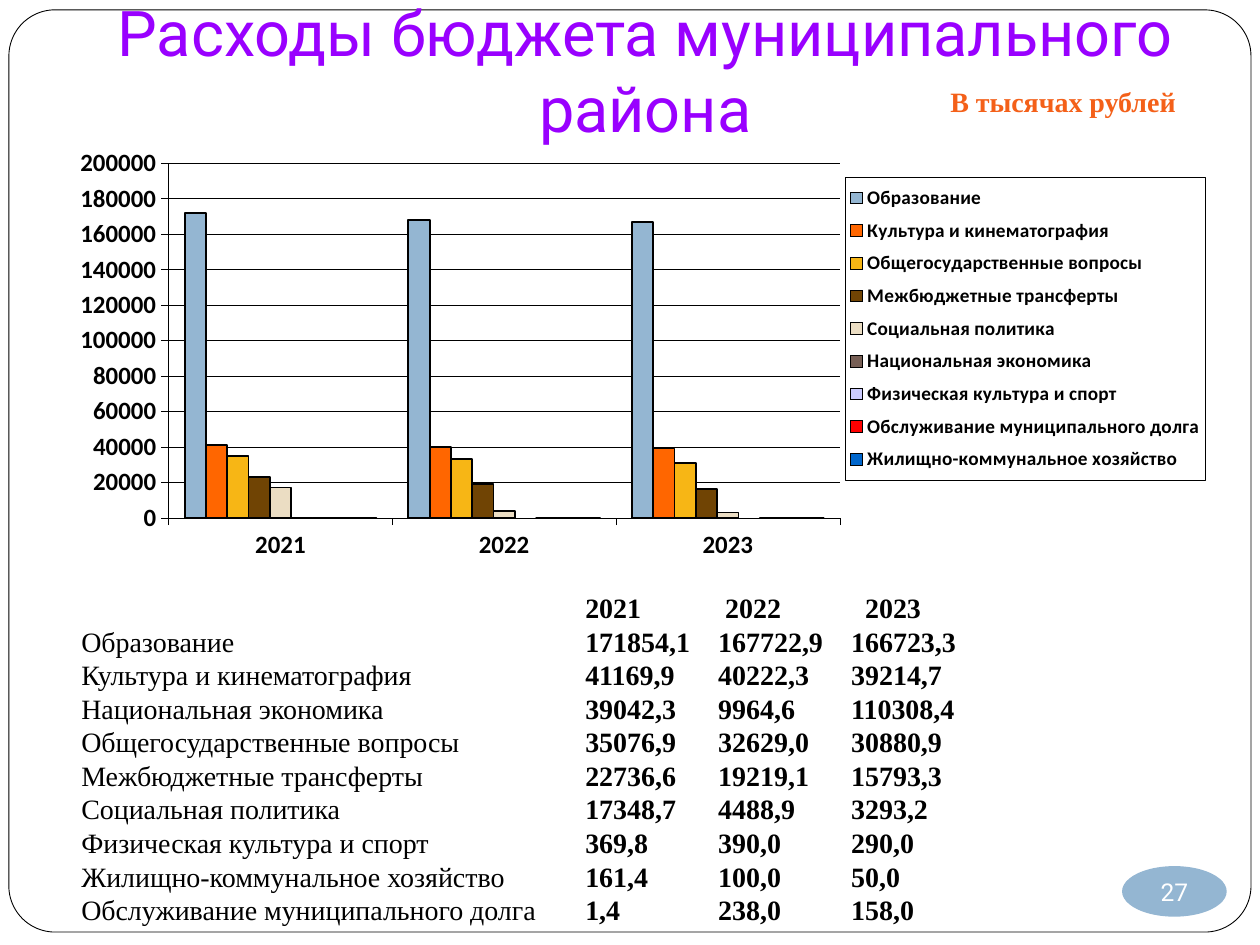
from dataclasses import dataclass

from lxml import etree
from pptx import Presentation
from pptx.chart.data import CategoryChartData
from pptx.dml.color import RGBColor
from pptx.enum.chart import XL_CHART_TYPE, XL_LEGEND_POSITION, XL_TICK_LABEL_POSITION, XL_TICK_MARK
from pptx.enum.shapes import MSO_SHAPE
from pptx.enum.text import MSO_ANCHOR, PP_ALIGN
from pptx.oxml import parse_xml
from pptx.oxml.ns import nsdecls, qn
from pptx.util import Cm, Pt


@dataclass(frozen=True)
class Theme:
    ink: str = "000000"
    paper: str = "FFFFFF"
    title: str = "9900FF"
    unit: str = "F46019"
    badge: str = "94B6D2"
    head_font: str = "Roboto"
    body_font: str = "Times New Roman"
    chart_font: str = "Calibri"
    title_size: float = 36
    body_size: float = 16
    badge_size: float = 14
    axis_size: float = 14.2
    legend_size: float = 11


def style(font, name, size, color, bold=False):
    font.name, font.size, font.bold = name, Pt(size), bold
    font.color.rgb = RGBColor.from_string(color)


def manual_layout(x, y, w, h, inner=False):
    """Return a chart layout element for a box given in centimetres."""
    layout = parse_xml(f'<c:layout {nsdecls("c")}><c:manualLayout/></c:layout>')
    settings = [("layoutTarget", "inner")] if inner else []
    settings += [("xMode", "edge"), ("yMode", "edge"), ("x", x / chart_width), ("y", y / chart_height),
                 ("w", w / chart_width), ("h", h / chart_height)]
    for tag, value in settings:
        etree.SubElement(layout[0], qn(f"c:{tag}")).set("val", str(value))
    return layout


theme = Theme()
chart_width, chart_height = 24.21, 8.76
years = ["2021", "2022", "2023"]
expenses = {
    "Образование": (171854.1, 167722.9, 166723.3),
    "Культура и кинематография": (41169.9, 40222.3, 39214.7),
    "Национальная экономика": (39042.3, 9964.6, 110308.4),
    "Общегосударственные вопросы": (35076.9, 32629.0, 30880.9),
    "Межбюджетные трансферты": (22736.6, 19219.1, 15793.3),
    "Социальная политика": (17348.7, 4488.9, 3293.2),
    "Физическая культура и спорт": (369.8, 390.0, 290.0),
    "Жилищно-коммунальное хозяйство": (161.4, 100.0, 50.0),
    "Обслуживание муниципального долга": (1.4, 238.0, 158.0),
}
series_colors = {
    "Образование": "94B6D2",
    "Культура и кинематография": "FF6600",
    "Общегосударственные вопросы": "F7B615",
    "Межбюджетные трансферты": "704404",
    "Социальная политика": "EBDDC3",
    "Национальная экономика": "775F55",
    "Физическая культура и спорт": "CCCCFF",
    "Обслуживание муниципального долга": "FF0000",
    "Жилищно-коммунальное хозяйство": "0066CC",
}
# The chart shows whole thousands, and no amounts for the national economy.
plotted = {name: [round(v, -3) for v in values] for name, values in expenses.items()}
plotted["Национальная экономика"] = [0, None, None]

prs = Presentation()
prs.slide_width, prs.slide_height = Cm(25.4), Cm(19.05)
s = prs.slides.add_slide(prs.slide_layouts[6])

# Frame
frame = s.shapes.add_shape(MSO_SHAPE.ROUNDED_RECTANGLE, Cm(0.18), Cm(0.2), Cm(25.04), Cm(18.59))
frame.adjustments[0] = 0.05
frame.shadow.inherit = False
frame.fill.solid()
frame.fill.fore_color.rgb = RGBColor.from_string(theme.paper)
frame.line.color.rgb = RGBColor.from_string(theme.ink)
frame.line.width = Pt(0.5)

# Title and unit
headings = [
    ("Расходы бюджета муниципального района", (1.58, 1.19, 22.86, 1.98), MSO_ANCHOR.BOTTOM,
     (theme.head_font, theme.title_size, theme.title)),
    ("В тысячах рублей", (17.47, 1.57, 7.92, 0.94), MSO_ANCHOR.TOP,
     (theme.body_font, theme.body_size, theme.unit, True)),
]
for text, box, anchor, font in headings:
    tf = s.shapes.add_textbox(*map(Cm, box)).text_frame
    tf.word_wrap = True
    tf.vertical_anchor = anchor
    tf.text = text
    p = tf.paragraphs[0]
    p.alignment = PP_ALIGN.CENTER
    style(p.runs[0].font, *font)
    if anchor == MSO_ANCHOR.BOTTOM:
        tf.margin_bottom = Cm(0.25)

# Slide number
badge = s.shapes.add_shape(MSO_SHAPE.OVAL, Cm(22.62), Cm(17.46), Cm(2.11), Cm(1.02))
badge.shadow.inherit = False
badge.fill.solid()
badge.fill.fore_color.rgb = RGBColor.from_string(theme.badge)
badge.line.fill.background()
tf = badge.text_frame
tf.margin_left = tf.margin_right = tf.margin_top = tf.margin_bottom = 0
tf.word_wrap = False
tf.vertical_anchor = MSO_ANCHOR.MIDDLE
tf.text = "27"
p = tf.paragraphs[0]
p.alignment = PP_ALIGN.CENTER
style(p.runs[0].font, theme.head_font, theme.badge_size, theme.paper)

# Chart
data = CategoryChartData()
data.categories = years
for name in series_colors:
    data.add_series(name, plotted[name])
chart = s.shapes.add_chart(XL_CHART_TYPE.COLUMN_CLUSTERED, Cm(1.19), Cm(2.97),
                           Cm(chart_width), Cm(chart_height), data).chart
chart.has_title = False
style(chart.font, theme.chart_font, theme.axis_size, theme.ink, True)
plot = chart.plots[0]
plot.gap_width, plot.overlap = 150, 0
plot.vary_by_categories = False
for series, color in zip(plot.series, series_colors.values()):
    series.format.fill.solid()
    series.format.fill.fore_color.rgb = RGBColor.from_string(color)
    series.format.line.color.rgb = RGBColor.from_string(theme.ink)
    series.format.line.width = Pt(1)

axis = chart.value_axis
axis.minimum_scale, axis.maximum_scale, axis.major_unit = 0, 200000, 20000
axis.has_major_gridlines = True
axis.tick_labels.number_format = "0"
axis.tick_labels.number_format_is_linked = False
chart.category_axis.tick_label_position = XL_TICK_LABEL_POSITION.LOW
for axis in (chart.category_axis, chart.value_axis):
    axis.major_tick_mark = XL_TICK_MARK.OUTSIDE
    style(axis.tick_labels.font, theme.chart_font, theme.axis_size, theme.ink, True)
for part in (chart.category_axis, chart.value_axis, chart.value_axis.major_gridlines):
    part.format.line.color.rgb = RGBColor.from_string(theme.ink)
    part.format.line.width = Pt(0.25)

chart.has_legend = True
legend = chart.legend
legend.position = XL_LEGEND_POSITION.RIGHT
legend.include_in_layout = False
style(legend.font, theme.chart_font, theme.legend_size, theme.ink, True)
plot_area = chart._chartSpace.chart.plotArea
for parent in (plot_area, legend._element):
    for old in parent.findall(qn("c:layout")):
        parent.remove(old)
plot_area.insert(0, manual_layout(2.21, 0.32, 13.53, 7.15, inner=True))
legend._element.find(qn("c:legendPos")).addnext(manual_layout(15.85, 0.6, 7.26, 6.12))
legend._element.find(qn("c:overlay")).addnext(parse_xml(
    f'<c:spPr {nsdecls("c", "a")}><a:ln w="3175"><a:solidFill>'
    f'<a:srgbClr val="{theme.ink}"/></a:solidFill></a:ln></c:spPr>'))

# Amounts by year, aligned on tab stops; the year headings are set a little wider
tf = s.shapes.add_textbox(Cm(1.39), Cm(11.78), Cm(23.01), Cm(7.12)).text_frame
tf.word_wrap = True
rows = [("", years)]
rows += [(name, [f"{v:.1f}".replace(".", ",") for v in values]) for name, values in expenses.items()]
for i, (name, cells) in enumerate(rows):
    p = tf.paragraphs[0] if i == 0 else tf.add_paragraph()
    p.line_spacing = Pt(19.2)
    pitch = 2.68 if name else 2.82
    tabs = etree.SubElement(p._p.get_or_add_pPr(), qn("a:tabLst"))
    for column in range(len(years)):
        etree.SubElement(tabs, qn("a:tab"), pos=str(Cm(10.16 + pitch * column)), algn="l")
    for text, bold in ((name, False), ("\t" + "\t".join(cells), True)):
        if text:
            r = p.add_run()
            r.text = text
            style(r.font, theme.body_font, theme.body_size, theme.ink, bold)

prs.save("out.pptx")
